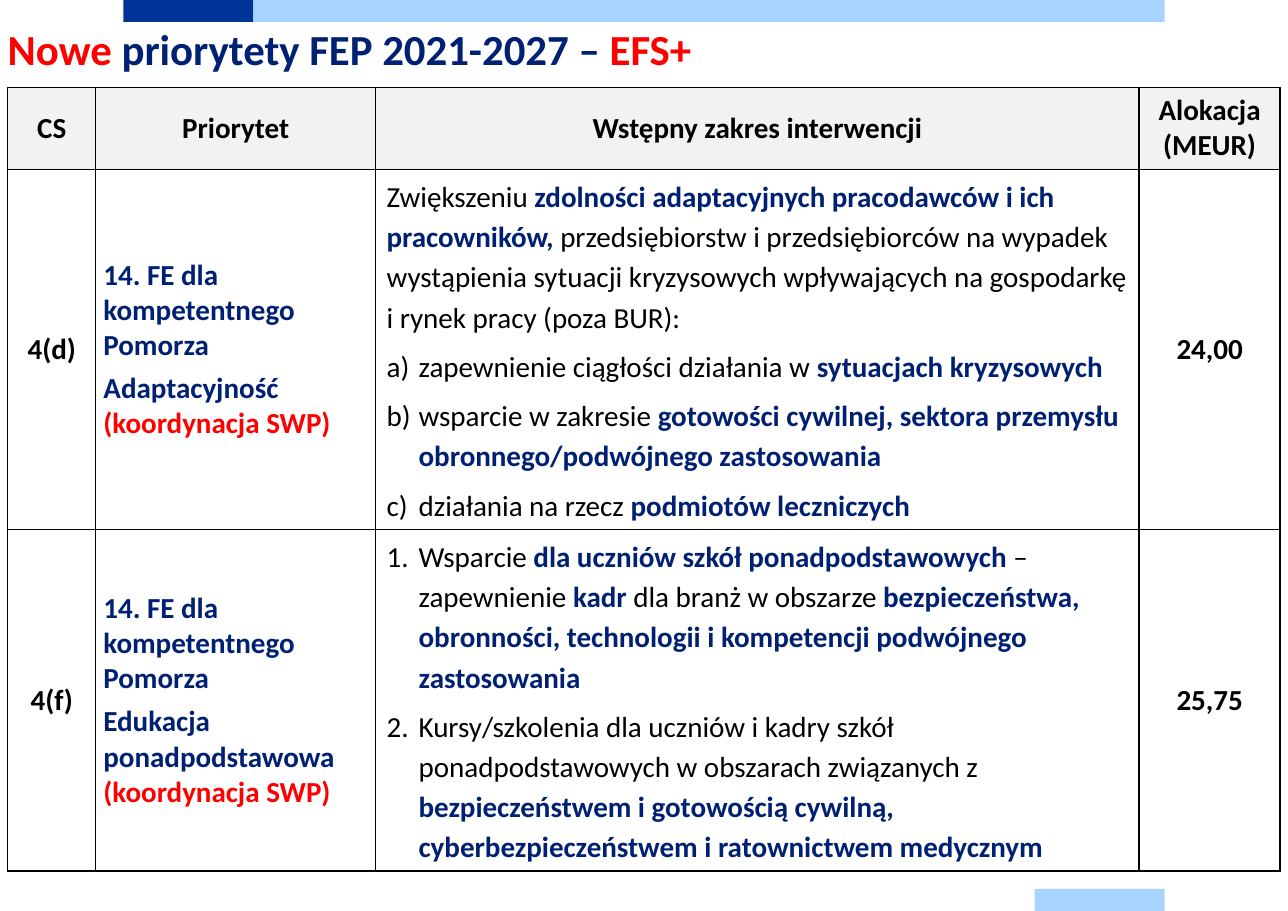
from dataclasses import dataclass
from typing import NamedTuple

from lxml import etree
from pptx import Presentation
from pptx import util as u
from pptx.dml import color
from pptx.enum import shapes, text
from pptx.oxml import ns

W, H = u.Inches(11.69), u.Inches(8.27)
FONT = "Calibri"
BLACK, NAVY, RED = "000000", "002073", "FF0000"
BLUE, SKY, GREY = "003399", "A6D3FF", "F2F2F2"
LEFT, CENTER = text.PP_ALIGN.LEFT, text.PP_ALIGN.CENTER
LETTERS, NUMBERS = "alphaLcParenR", "arabicPeriod"
COLUMNS = (6.84, 21.73, 59.28, 10.95)
ROWS = (9, 39.54, 37.48)
TABLE_LEFT, TABLE_TOP = 0.6, 9.6
BAND_HEIGHT = 2.42


class Run(NamedTuple):
    words: str
    hue: str = BLACK
    bold: bool = True


class Band(NamedTuple):
    left: float
    top: float
    width: float
    hue: str


@dataclass
class Para:
    runs: list[Run]
    numbering: str = ""


@dataclass
class Cell:
    paras: list[Para]
    align: text.PP_ALIGN = CENTER
    line_spacing: float = 1.0
    space_before: float = 5
    margins: tuple[float, float] = (0.07, 0)
    fill: str = ""


def x(percent: float) -> int:
    return round(W * percent / 100)


def y(percent: float) -> int:
    return round(H * percent / 100)


def rgb(hue: str) -> color.RGBColor:
    return color.RGBColor.from_string(hue)


def apply(target, **values) -> None:
    for name, value in values.items():
        setattr(target, name, value)


def plain(words: str) -> Run:
    return Run(words, BLACK, False)


def strong(words: str) -> Run:
    return Run(words, NAVY)


def label(words: str, **values) -> Cell:
    return Cell([Para([Run(words)])], **values)


def heading(words: str) -> Cell:
    return label(words, margins=(0.1, 0.05), fill=GREY)


def priority(name: str) -> Cell:
    return Cell([Para([strong("14. FE dla kompetentnego Pomorza")]),
                 Para([strong(name), Run(" (koordynacja SWP)", RED)])], LEFT)


def scope(*paras: Para) -> Cell:
    return Cell(list(paras), LEFT, 1.14, 6, (0.1, 0.05))


def add_runs(p, runs: list[Run], size: float) -> None:
    for run in runs:
        for i, line in enumerate(run.words.split("\n")):
            if i:
                p.add_line_break()
            r = p.add_run()
            r.text = line
            apply(r.font, name=FONT, size=u.Pt(size), bold=run.bold)
            r.font.color.rgb = rgb(run.hue)


def add_numbering(p, kind: str) -> None:
    pPr = p._p.get_or_add_pPr()
    pPr.set("marL", str(u.Inches(0.29)))
    pPr.set("indent", str(-u.Inches(0.29)))
    etree.SubElement(pPr, ns.qn("a:buAutoNum"), type=kind)


def add_borders(cell) -> None:
    tcPr = cell._tc.get_or_add_tcPr()
    for side in ("lnL", "lnR", "lnT", "lnB"):
        ln = etree.SubElement(tcPr, ns.qn(f"a:{side}"), w=str(u.Pt(1)))
        fill = etree.SubElement(ln, ns.qn("a:solidFill"))
        etree.SubElement(fill, ns.qn("a:srgbClr"), val=BLACK)


def fill_cell(cell, content: Cell) -> None:
    across, down = map(u.Inches, content.margins)
    apply(cell, margin_left=across, margin_right=across, margin_top=down,
          margin_bottom=down, vertical_anchor=text.MSO_ANCHOR.MIDDLE)
    add_borders(cell)
    if content.fill:
        cell.fill.solid()
        cell.fill.fore_color.rgb = rgb(content.fill)
    else:
        cell.fill.background()
    tf = cell.text_frame
    for i, para in enumerate(content.paras):
        p = tf.add_paragraph() if i else tf.paragraphs[0]
        apply(p, alignment=content.align, line_spacing=content.line_spacing,
              space_before=u.Pt(content.space_before if i else 0))
        if para.numbering:
            add_numbering(p, para.numbering)
        add_runs(p, para.runs, 19)


def add_band(s, band: Band) -> None:
    sp = s.shapes.add_shape(shapes.MSO_SHAPE.RECTANGLE, x(band.left), y(band.top),
                            x(band.width), y(BAND_HEIGHT))
    sp.shadow.inherit = False
    sp.fill.solid()
    sp.fill.fore_color.rgb = rgb(band.hue)
    sp.line.fill.background()


def add_title(s, runs: list[Run]) -> None:
    sp = s.shapes.title
    apply(sp, left=x(TABLE_LEFT), top=y(2.1), width=x(sum(COLUMNS)), height=y(7.26))
    tf = sp.text_frame
    apply(tf, margin_left=0, margin_right=0, margin_top=0, margin_bottom=0,
          word_wrap=True, auto_size=text.MSO_AUTO_SIZE.NONE,
          vertical_anchor=text.MSO_ANCHOR.TOP)
    p = tf.paragraphs[0]
    apply(p, alignment=LEFT, line_spacing=u.Pt(36), space_before=u.Pt(0))
    add_runs(p, runs, 28)


def add_priorities(s, rows: list[list[Cell]]) -> None:
    table = s.shapes.add_table(len(ROWS), len(COLUMNS), x(TABLE_LEFT), y(TABLE_TOP),
                               x(sum(COLUMNS)), y(sum(ROWS))).table
    apply(table, first_row=False, horz_banding=False)
    for column, width in zip(table.columns, COLUMNS):
        column.width = x(width)
    for row, height, cells in zip(table.rows, ROWS, rows):
        row.height = y(height)
        for cell, content in zip(row.cells, cells):
            fill_cell(cell, content)


BANDS = [Band(9.58, 0, 10.1, BLUE), Band(19.68, 0, 70.74, SKY),
         Band(80.33, 100 - BAND_HEIGHT, 10.1, SKY)]

TITLE = [Run("Nowe", RED), strong(" priorytety FEP 2021-2027 – "), Run("EFS+", RED)]

ADAPTABILITY = scope(
    Para([plain("Zwiększeniu "),
          strong("zdolności adaptacyjnych pracodawców i ich pracowników,"),
          plain(" przedsiębiorstw i przedsiębiorców na wypadek wystąpienia sytuacji "
                "kryzysowych wpływających na gospodarkę i rynek pracy (poza BUR):")]),
    Para([plain("zapewnienie ciągłości działania w "),
          strong("sytuacjach kryzysowych")], LETTERS),
    Para([plain("wsparcie w zakresie "),
          strong("gotowości cywilnej, sektora przemysłu "
                 "obronnego/podwójnego zastosowania")], LETTERS),
    Para([plain("działania na rzecz "), strong("podmiotów leczniczych")], LETTERS))

EDUCATION = scope(
    Para([plain("Wsparcie "), strong("dla uczniów szkół ponadpodstawowych "),
          plain("– zapewnienie "), strong("kadr "), plain("dla branż w obszarze "),
          strong("bezpieczeństwa, obronności, technologii i kompetencji "
                 "podwójnego zastosowania")], NUMBERS),
    Para([plain("Kursy/szkolenia dla uczniów i kadry szkół ponadpodstawowych "
                "w obszarach związanych z "),
          strong("bezpieczeństwem i gotowością cywilną, cyberbezpieczeństwem "
                 "i ratownictwem medycznym")], NUMBERS))

PRIORITIES = [
    [heading(words) for words in ("CS", "Priorytet", "Wstępny zakres interwencji",
                                  "Alokacja\n(MEUR)")],
    [label("4(d)"), priority("Adaptacyjność"), ADAPTABILITY, label("24,00")],
    [label("4(f)"), priority("Edukacja ponadpodstawowa"), EDUCATION, label("25,75")]]


def main() -> None:
    prs = Presentation()
    apply(prs, slide_width=W, slide_height=H)
    s = prs.slides.add_slide(prs.slide_layouts.get_by_name("Title Only"))
    for band in BANDS:
        add_band(s, band)
    add_priorities(s, PRIORITIES)
    add_title(s, TITLE)
    prs.save("out.pptx")


if __name__ == "__main__":
    main()
